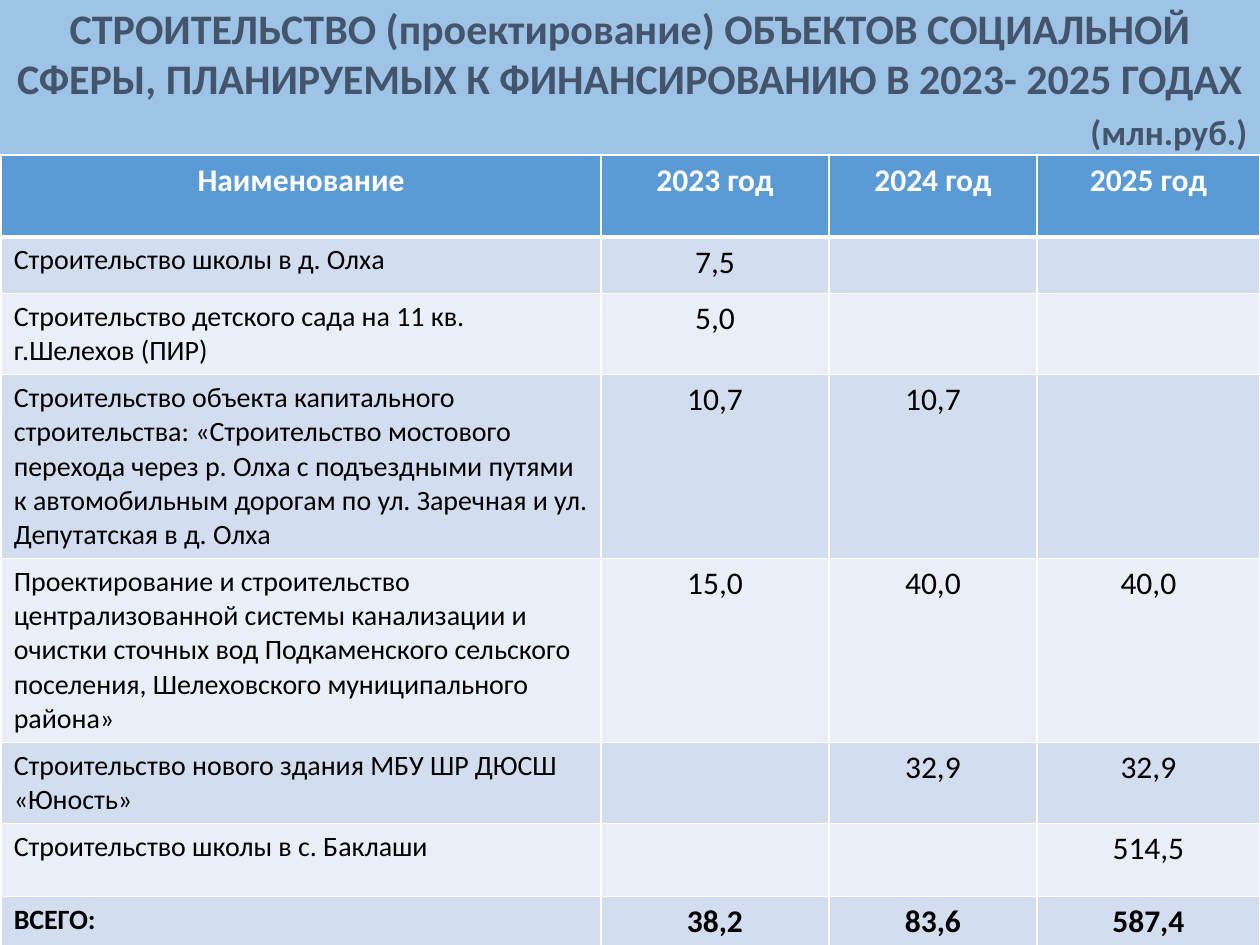
import pptx
import pptx.util
from lxml import etree
from pptx.dml.color import RGBColor
from pptx.enum.text import MSO_ANCHOR, MSO_AUTO_SIZE, PP_ALIGN
from pptx.oxml.ns import qn
from pptx.util import Inches, Pt

FONT = "Calibri"
TITLE_FILL = RGBColor(0x9D, 0xC3, 0xE6)
TITLE_TEXT = RGBColor(0x44, 0x54, 0x6A)
TITLE_OUTLINE = RGBColor(0x50, 0x93, 0xCF)
HEADER_FILL = RGBColor(0x5B, 0x9B, 0xD5)
ODD_FILL = RGBColor(0xD2, 0xDE, 0xEF)
EVEN_FILL = RGBColor(0xEA, 0xEF, 0xF7)
WHITE = RGBColor(0xFF, 0xFF, 0xFF)
BLACK = RGBColor(0, 0, 0)

TITLE_LINES = [
    ("СТРОИТЕЛЬСТВО (проектирование) ОБЪЕКТОВ СОЦИАЛЬНОЙ", 24, PP_ALIGN.CENTER),
    ("СФЕРЫ, ПЛАНИРУЕМЫХ К ФИНАНСИРОВАНИЮ В 2023- 2025 ГОДАХ", 24, PP_ALIGN.CENTER),
    ("(млн.руб.)", 20, PP_ALIGN.RIGHT),
]
COLUMN_WIDTHS = [4.76, 1.81, 1.65, 1.77]
ROW_HEIGHTS = [0.65, 0.45, 0.47, 0.54, 1.4, 0.58, 0.58, 0.64]
ROWS = [
    ("Наименование", "2023 год", "2024 год", "2025 год"),
    ("Строительство школы в д. Олха", "7,5", "", ""),
    ("Строительство детского сада на 11 кв. г.Шелехов (ПИР)", "5,0", "", ""),
    ("Строительство объекта капитального строительства: «Строительство мостового "
     "перехода через р. Олха с подъездными путями к автомобильным дорогам по "
     "ул. Заречная и ул. Депутатская в д. Олха", "10,7", "10,7", ""),
    ("Проектирование и строительство централизованной системы канализации и "
     "очистки сточных вод Подкаменского сельского поселения, Шелеховского "
     "муниципального района»", "15,0", "40,0", "40,0"),
    ("Строительство нового здания МБУ ШР ДЮСШ «Юность»", "", "32,9", "32,9"),
    ("Строительство школы в с. Баклаши", "", "", "514,5"),
    ("ВСЕГО:", "38,2", "83,6", "587,4"),
]


def format_paragraph(paragraph, size, color, bold, alignment):
    paragraph.alignment = alignment
    for run in paragraph.runs:
        run.font.name = FONT
        run.font.size = Pt(size)
        run.font.bold = bold
        run.font.color.rgb = color


def make_line(tag, color, width):
    """Return a line element of the given tag with a solid colour."""
    line = etree.Element(qn(tag), w=str(Pt(width)))
    fill = etree.SubElement(line, qn("a:solidFill"))
    etree.SubElement(fill, qn("a:srgbClr"), val=str(color))
    return line


def set_cell_borders(cell, bottom_width):
    properties = cell._tc.get_or_add_tcPr()
    widths = {"a:lnL": 1, "a:lnR": 1, "a:lnT": 1, "a:lnB": bottom_width}
    for position, (tag, width) in enumerate(widths.items()):
        properties.insert(position, make_line(tag, WHITE, width))


def add_title(slide):
    title = slide.shapes.title
    title.left, title.top = Inches(0), Inches(0)
    title.width, title.height = Inches(10), Inches(1.23)
    title.fill.solid()
    title.fill.fore_color.rgb = TITLE_FILL
    text_frame = title.text_frame
    text_frame.auto_size = MSO_AUTO_SIZE.NONE
    text_frame.word_wrap = True
    text_frame.vertical_anchor = MSO_ANCHOR.MIDDLE
    text_frame.text = "\n".join(text for text, _, _ in TITLE_LINES)
    for paragraph, (_, size, alignment) in zip(text_frame.paragraphs, TITLE_LINES):
        format_paragraph(paragraph, size, TITLE_TEXT, True, alignment)
        for run in paragraph.runs:
            outline = make_line("a:ln", TITLE_OUTLINE, 0.83)
            run.font._element.insert(0, outline)
    text_frame.paragraphs[-1].space_before = Pt(4)


def fill_cell(cell, text, row, column):
    is_header = row == 0
    is_total = row == len(ROWS) - 1
    is_name = column == 0 and not is_header
    cell.text = text
    format_paragraph(
        cell.text_frame.paragraphs[0],
        16 if is_name else 18,
        WHITE if is_header else BLACK,
        is_header or is_total,
        PP_ALIGN.LEFT if is_name else PP_ALIGN.CENTER,
    )
    cell.fill.solid()
    body_fill = ODD_FILL if row % 2 else EVEN_FILL
    cell.fill.fore_color.rgb = HEADER_FILL if is_header else body_fill
    set_cell_borders(cell, 3 if is_header else 1)


def add_budget_table(slide):
    table = slide.shapes.add_table(
        len(ROWS), len(COLUMN_WIDTHS), Inches(0.01), Inches(1.23),
        Inches(sum(COLUMN_WIDTHS)), Inches(sum(ROW_HEIGHTS)),
    ).table
    for column, width in zip(table.columns, COLUMN_WIDTHS):
        column.width = Inches(width)
    for row, height in zip(table.rows, ROW_HEIGHTS):
        row.height = Inches(height)
    for row, texts in enumerate(ROWS):
        for column, text in enumerate(texts):
            fill_cell(table.cell(row, column), text, row, column)


def main():
    presentation = pptx.Presentation()
    presentation.slide_width = Inches(10)
    presentation.slide_height = Inches(7.5)
    slide = presentation.slides.add_slide(presentation.slide_layouts[5])
    add_title(slide)
    add_budget_table(slide)
    presentation.save("out.pptx")


if __name__ == "__main__":
    main()
